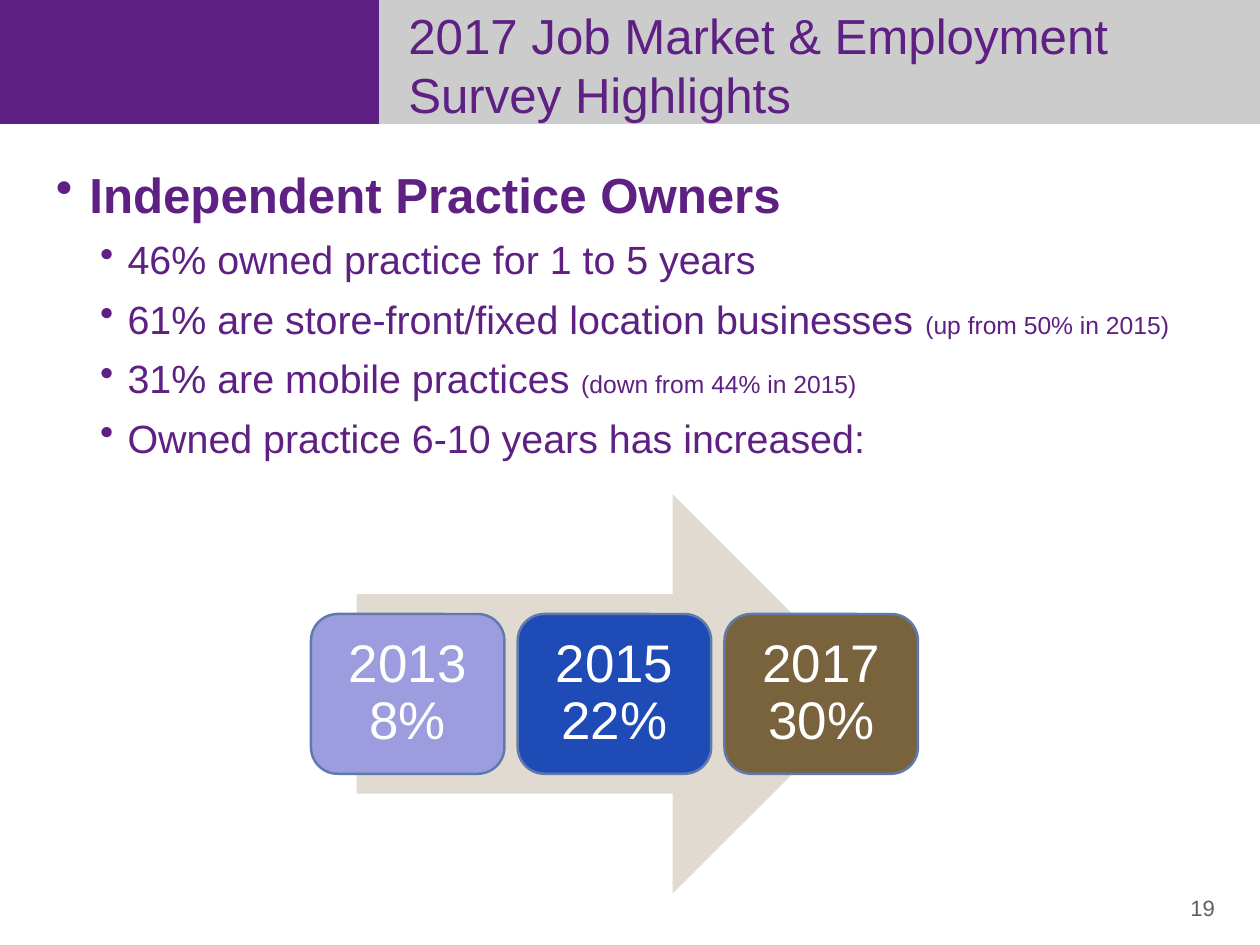
import pptx
import pptx.util
import pptx.dml.color
import pptx.enum.shapes
import pptx.enum.text
import pptx.oxml.ns
from lxml import etree

Inches = pptx.util.Inches
Pt = pptx.util.Pt
SHAPE = pptx.enum.shapes.MSO_SHAPE
ALIGN = pptx.enum.text.PP_ALIGN
ANCHOR = pptx.enum.text.MSO_ANCHOR

COLORS = {
    "purple": "5E2082", "band": "CCCCCC", "number": "606060", "white": "FFFFFF",
    "arrow": "E1DAD1", "outline": "5F7BAE",
    "2013": "9C9CDF", "2015": "1F4BB7", "2017": "78633D",
}
HEADING = "Independent Practice Owners"
FINDINGS = [
    ("46% owned practice for 1 to 5 years", ""),
    ("61% are store-front/fixed location businesses ", "(up from 50% in 2015)"),
    ("31% are mobile practices ", "(down from 44% in 2015)"),
    ("Owned practice 6-10 years has increased:", ""),
]
SHARES = [("2013", "8%"), ("2015", "22%"), ("2017", "30%")]


def color(name):
    return pptx.dml.color.RGBColor.from_string(COLORS[name])


def set_font(font, size, color_name, bold=False):
    font.name = "Arial"
    font.size = Pt(size)
    font.bold = bold
    font.color.rgb = color(color_name)


def set_frame(frame, inset_x, inset_y, anchor=ANCHOR.TOP):
    frame.word_wrap = True
    frame.vertical_anchor = anchor
    frame.margin_left = frame.margin_right = Inches(inset_x)
    frame.margin_top = frame.margin_bottom = Inches(inset_y)


def add_block(slide, kind, left, top, width, height, fill, outline=None):
    block = slide.shapes.add_shape(
        kind, Inches(left), Inches(top), Inches(width), Inches(height))
    block.shadow.inherit = False
    block.fill.solid()
    block.fill.fore_color.rgb = color(fill)
    if outline:
        block.line.color.rgb = color(outline)
        block.line.width = Pt(2)
    else:
        block.line.fill.background()
    return block


def add_text(slide, left, top, width, height, inset_x=0.1, inset_y=0.05,
             anchor=ANCHOR.TOP):
    frame = slide.shapes.add_textbox(
        Inches(left), Inches(top), Inches(width), Inches(height)).text_frame
    set_frame(frame, inset_x, inset_y, anchor)
    return frame


def add_bullet(paragraph, margin, hanging):
    properties = paragraph._p.get_or_add_pPr()
    properties.set("marL", str(Inches(margin)))
    properties.set("indent", str(-Inches(hanging)))
    bullet = etree.SubElement(properties, pptx.oxml.ns.qn("a:buChar"))
    bullet.set("char", "•")
    paragraph.space_after = Pt(10)


def build_header(slide, left, top, width, height):
    accent_width = 4.28
    add_block(slide, SHAPE.RECTANGLE, left, top, accent_width, height, "purple")
    add_block(slide, SHAPE.RECTANGLE, left + accent_width, top,
              width - accent_width, height, "band")
    title = add_text(slide, left + 4.51, top + 0.29, 9, 0.87,
                     anchor=ANCHOR.MIDDLE).paragraphs[0]
    title.text = "2017 Job Market & Employment Survey Highlights"
    set_font(title.font, 40, "purple")


def build_findings(slide, left, top, width, height):
    frame = add_text(slide, left, top, width, height, 0.06, 0.06)
    heading = frame.paragraphs[0]
    heading.text = HEADING
    add_bullet(heading, 0.38, 0.38)
    set_font(heading.font, 40, "purple", bold=True)
    for statement, comparison in FINDINGS:
        finding = frame.add_paragraph()
        finding.level = 1
        add_bullet(finding, 0.81, 0.31)
        if comparison:
            for wording, size in ((statement, 32), (comparison, 20)):
                run = finding.add_run()
                run.text = wording
                set_font(run.font, size, "purple")
        else:
            finding.text = statement
            set_font(finding.font, 32, "purple")


def build_growth(slide, left, top, width, height):
    # Arrow behind the years
    arrow_width = 0.85 * width
    add_block(slide, SHAPE.RIGHT_ARROW, left + (width - arrow_width) / 2, top,
              arrow_width, height, "arrow")

    # One card per survey year
    gap = 0.15
    card_width = (width - gap * (len(SHARES) - 1)) / len(SHARES)
    card_height = 0.4 * height
    for i, (year, share) in enumerate(SHARES):
        card = add_block(slide, SHAPE.ROUNDED_RECTANGLE,
                         left + i * (card_width + gap),
                         top + (height - card_height) / 2,
                         card_width, card_height, year, "outline")
        set_frame(card.text_frame, 0.18, 0.18, ANCHOR.MIDDLE)
        label = card.text_frame.paragraphs[0]
        label.text = f"{year} {share}"
        label.alignment = ALIGN.CENTER
        label.line_spacing = 0.9
        set_font(label.font, 43, "white")


def build_page_number(slide, left, top, width, height):
    number = add_text(slide, left, top, width, height).paragraphs[0]
    number.text = "19"
    number.alignment = ALIGN.RIGHT
    set_font(number.font, 18, "number")


def main():
    deck = pptx.Presentation()
    deck.slide_width = Inches(14.22)
    deck.slide_height = Inches(10.67)
    slide = deck.slides.add_slide(deck.slide_layouts[6])
    build_header(slide, 0, 0, 14.22, 1.4)
    build_page_number(slide, 13.1, 10.05, 0.71, 0.4)
    build_findings(slide, 0.57, 1.79, 12.94, 7.12)
    build_growth(slide, 3.51, 5.58, 6.85, 4.51)
    deck.save("out.pptx")


if __name__ == "__main__":
    main()
